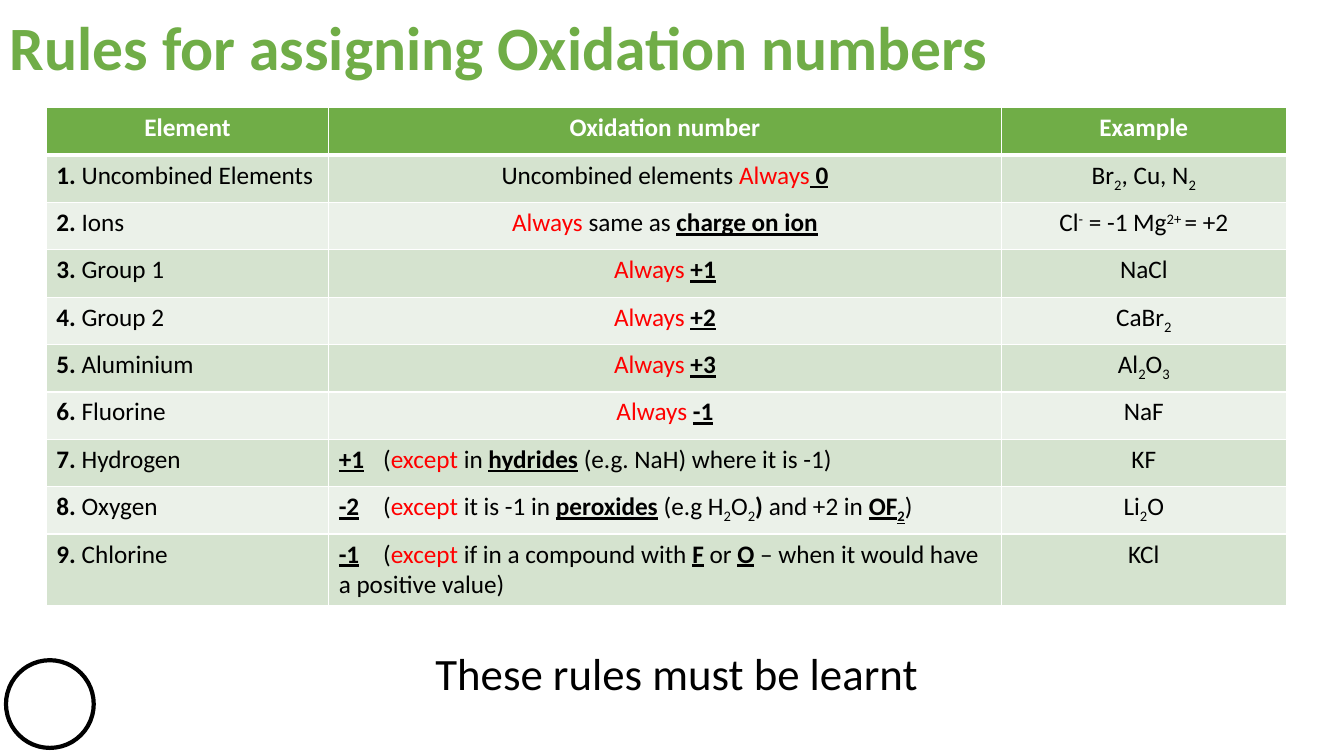
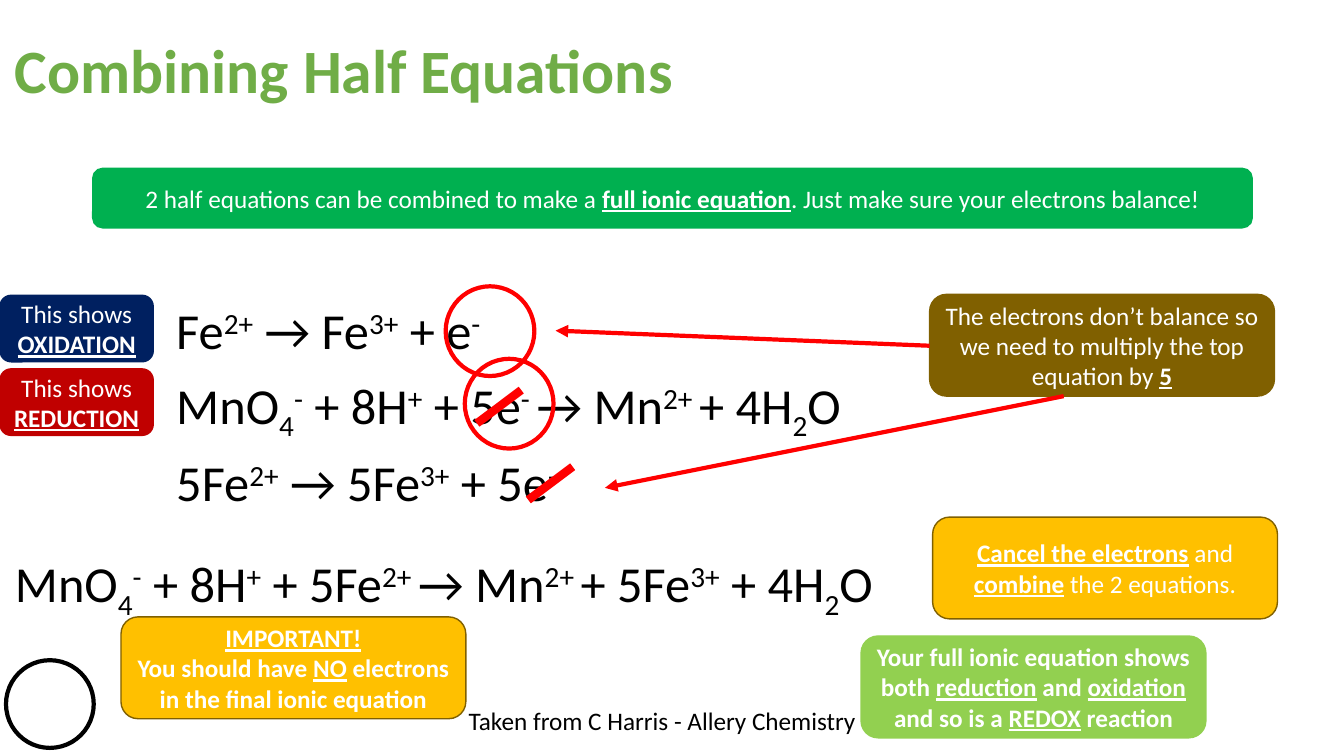
from lxml import etree
from pptx import Presentation
from pptx.dml.color import RGBColor
from pptx.enum.shapes import MSO_CONNECTOR, MSO_SHAPE
from pptx.enum.text import MSO_ANCHOR, PP_ALIGN
from pptx.oxml.ns import qn
from pptx.util import Inches, Pt

LEFT, CENTER = PP_ALIGN.LEFT, PP_ALIGN.CENTER
TOP, MIDDLE = MSO_ANCHOR.TOP, MSO_ANCHOR.MIDDLE
OVAL, ROUND = MSO_SHAPE.OVAL, MSO_SHAPE.ROUNDED_RECTANGLE
STRAIGHT = MSO_CONNECTOR.STRAIGHT

FONT = "Calibri"
COLORS = {
    "white": "FFFFFF", "black": "000000", "red": "FF0000", "title": "70AD47",
    "dark": "D5E3CF", "light": "EBF1E9", "banner": "00B050", "crimson": "C00000",
    "navy": "002060", "brown": "806000", "gold": "FFC000", "lime": "92D050",
}

# Marks: * bold, _ underline, # red, ~ subscript, ^ superscript
HEADS = ["Element", "Oxidation number", "Example"]
RULES = [
    ("Uncombined Elements", "Uncombined elements #Always#*_ 0_*", "Br~2~, Cu, N~2~"),
    ("Ions", "#Always #same as *_charge on ion_*", "Cl^-^ = -1 Mg^2+ ^= +2"),
    ("Group 1", "#Always #*_+1_*", "NaCl"),
    ("Group 2", "#Always #*_+2_*", "CaBr~2~"),
    ("Aluminium", "#Always #*_+3_*", "Al~2~O~3~"),
    ("Fluorine", "#Always #*_-1_*", "NaF"),
    ("Hydrogen", "*_+1_*\t(#except# in *_hydrides_* (e.g. NaH) where it is -1)", "KF"),
    ("Oxygen", "*_-2_*\t(#except# it is -1 in *_peroxides_* (e.g H~2~O~2~*) *"
     "and +2 in *_OF~2~_*)", "Li~2~O"),
    ("Chlorine", "*_-1_*\t(#except# if in a compound with *_F_* or *_O_* "
     "– when it would have a positive value)", "KCl"),
]
COLS = [2.8, 6.67, 2.83]
ROW, LAST, TAB = 0.47, 0.71, 0.44

WIDE, SMALL = (3.42, 1.01), (1.52, 0.66)
BOXES = [
    (0.92, 1.67, (11.5, 0.59), "banner", "banner",
     "2 half equations can be combined to make a *_full ionic equation_*. "
     "Just make sure your electrons balance!"),
    (0, 2.93, SMALL, "navy", "navy", "This shows *_OXIDATION_*"),
    (0, 3.66, SMALL, "crimson", "crimson", "This shows *_REDUCTION_*"),
    (9.22, 2.92, WIDE, "brown", "brown",
     "The electrons don’t balance so we need to multiply the top equation by *_5_*"),
    (9.25, 5.13, WIDE, "gold", "brown",
     "*_Cancel the electrons_* and *_combine_* the 2 equations."),
    (1.2, 6.12, WIDE, "gold", "brown",
     "*_IMPORTANT!_*\n*You should have _NO_ electrons in the final ionic equation*"),
    (8.54, 6.31, WIDE, "lime", "lime",
     "*Your full ionic equation shows both _reduction_ and _oxidation_ "
     "and so is a _REDOX_ reaction*"),
]
SUMS = [
    (1.65, 2.92, 6.16, "Fe^2+^ → Fe^3+^ + e^-^"),
    (1.65, 3.66, 7.27, "MnO~4~^-^ + 8H^+^ + 5e^- ^→ Mn^2+ ^+ 4H~2~O"),
    (1.65, 4.43, 6.16, "5Fe^2+^ → 5Fe^3+^ + 5e^-^"),
    (0.05, 5.43, 9.12, "MnO~4~^-^ + 8H^+^ + 5Fe^2+ ^→ Mn^2+ ^+ 5Fe^3+^ + 4H~2~O"),
]
RINGS = [(4.61, 3.56), (4.42, 2.84)]
ARROWS = [(9.22, 3.43, 5.51, 3.28), (10.55, 3.93, 6, 4.84)]
STRIKES = [(5.24, 4.96), (4.73, 4.2)]


def color(name):
    return RGBColor.from_string(COLORS[name])


def add_run(para, text, marks):
    run = para.add_run()
    run.text = text
    if "*" in marks:
        run.font.bold = True
    if "_" in marks:
        run.font.underline = True
    if "#" in marks:
        run.font.color.rgb = color("red")
    for mark, shift in (("~", "-25000"), ("^", "30000")):
        if mark in marks:
            run._r.get_or_add_rPr().set("baseline", shift)


def write(frame, text, size, tint, align=LEFT, spacing=None):
    for i, line in enumerate(text.split("\n")):
        para = frame.add_paragraph() if i else frame.paragraphs[0]
        para.alignment = align
        if spacing:
            para.line_spacing = spacing
        if "\t" in line:
            tabs = etree.SubElement(para._p.get_or_add_pPr(), qn("a:tabLst"))
            etree.SubElement(tabs, qn("a:tab"), pos=str(Inches(TAB)), algn="l")
        para.font.name, para.font.size = FONT, Pt(size)
        para.font.color.rgb = color(tint)
        marks, part = set(), ""
        for char in line:
            if char in "*_#~^":
                if part:
                    add_run(para, part, marks)
                marks, part = marks ^ {char}, ""
            else:
                part += char
        if part:
            add_run(para, part, marks)


def add_text(slide, x, y, w, h, text, size, anchor=TOP, tint="black", spacing=None):
    box = slide.shapes.add_textbox(Inches(x), Inches(y), Inches(w), Inches(h))
    box.text_frame.word_wrap = True
    box.text_frame.vertical_anchor = anchor
    write(box.text_frame, text, size, tint, spacing=spacing)


def add_form(slide, kind, x, y, w, h, fill, edge, width):
    form = slide.shapes.add_shape(kind, Inches(x), Inches(y), Inches(w), Inches(h))
    form.shadow.inherit = False
    if fill:
        form.fill.solid()
        form.fill.fore_color.rgb = color(fill)
    else:
        form.fill.background()
    form.line.color.rgb = color(edge)
    form.line.width = Pt(width)
    return form


def add_line(slide, ends, width, arrow=False):
    line = slide.shapes.add_connector(STRAIGHT, *[Inches(v) for v in ends])
    line.line.color.rgb = color("red")
    line.line.width = Pt(width)
    props = line._element.spPr
    if arrow:
        etree.SubElement(props.find(qn("a:ln")), qn("a:tailEnd"), type="triangle")
    etree.SubElement(props, qn("a:effectLst"))


def add_slide(deck, title, x, h):
    slide = deck.slides.add_slide(deck.slide_layouts[6])
    add_form(slide, OVAL, 0.06, 6.55, 0.87, 0.87, "white", "black", 3)
    add_text(slide, x, 0, 11.5, h, f"*{title}*", 44, MIDDLE, "title", 0.9)
    return slide


def add_edges(cell, row):
    thick = {0: "B", 1: "T"}.get(row)
    for side in "LRTB":
        width = Pt(3 if side == thick else 1)
        edge = etree.SubElement(cell._tc.get_or_add_tcPr(), qn("a:ln" + side), w=str(width))
        fill = etree.SubElement(edge, qn("a:solidFill"))
        etree.SubElement(fill, qn("a:srgbClr"), val=COLORS["white"])


def add_rules(slide):
    rows = [[f"*{head}*" for head in HEADS]]
    rows += [(f"*{i}.* {name}", *rest) for i, (name, *rest) in enumerate(RULES, 1)]
    high = [ROW] * len(RULES) + [LAST]
    table = slide.shapes.add_table(
        len(rows), len(COLS), Inches(0.46), Inches(1.07),
        Inches(sum(COLS)), Inches(sum(high))).table
    table.horz_banding = False
    for col, width in zip(table.columns, COLS):
        col.width = Inches(width)
    for r, texts in enumerate(rows):
        table.rows[r].height = Inches(high[r])
        fill = ("dark" if r % 2 else "light") if r else "title"
        for c, text in enumerate(texts):
            cell = table.cell(r, c)
            add_edges(cell, r)
            cell.fill.solid()
            cell.fill.fore_color.rgb = color(fill)
            left = "\t" in text or (r and c == 0)
            write(cell.text_frame, text, 18, "black" if r else "white",
                  LEFT if left else CENTER)


def main():
    deck = Presentation()
    deck.slide_width, deck.slide_height = Inches(13.33), Inches(7.5)

    slide = add_slide(deck, "Rules for assigning Oxidation numbers", 0, 1)
    add_rules(slide)
    add_text(slide, 4.22, 6.36, 5.17, 0.64, "These rules must be learnt", 32)

    slide = add_slide(deck, "Combining Half Equations", 0.05, 1.45)
    add_text(slide, 4.55, 6.95, 4.5, 0.4, "Taken from C Harris - Allery Chemistry", 18)
    for x, y, w, text in SUMS:
        add_text(slide, x, y, w, 0.71, text, 36)
    for x, y, size, fill, edge, text in BOXES:
        box = add_form(slide, ROUND, x, y, *size, fill, edge, 1)
        box.text_frame.word_wrap = True
        box.text_frame.vertical_anchor = MIDDLE
        write(box.text_frame, text, 18, "white", CENTER)
    for x, y in RINGS:
        add_form(slide, OVAL, x, y, 0.88, 0.89, None, "red", 3)
    for ends in ARROWS:
        add_line(slide, ends, 3, True)
    for x, y in STRIKES:
        add_line(slide, (x, y, x + 0.44, y - 0.33), 6)

    deck.save("out.pptx")


if __name__ == "__main__":
    main()
